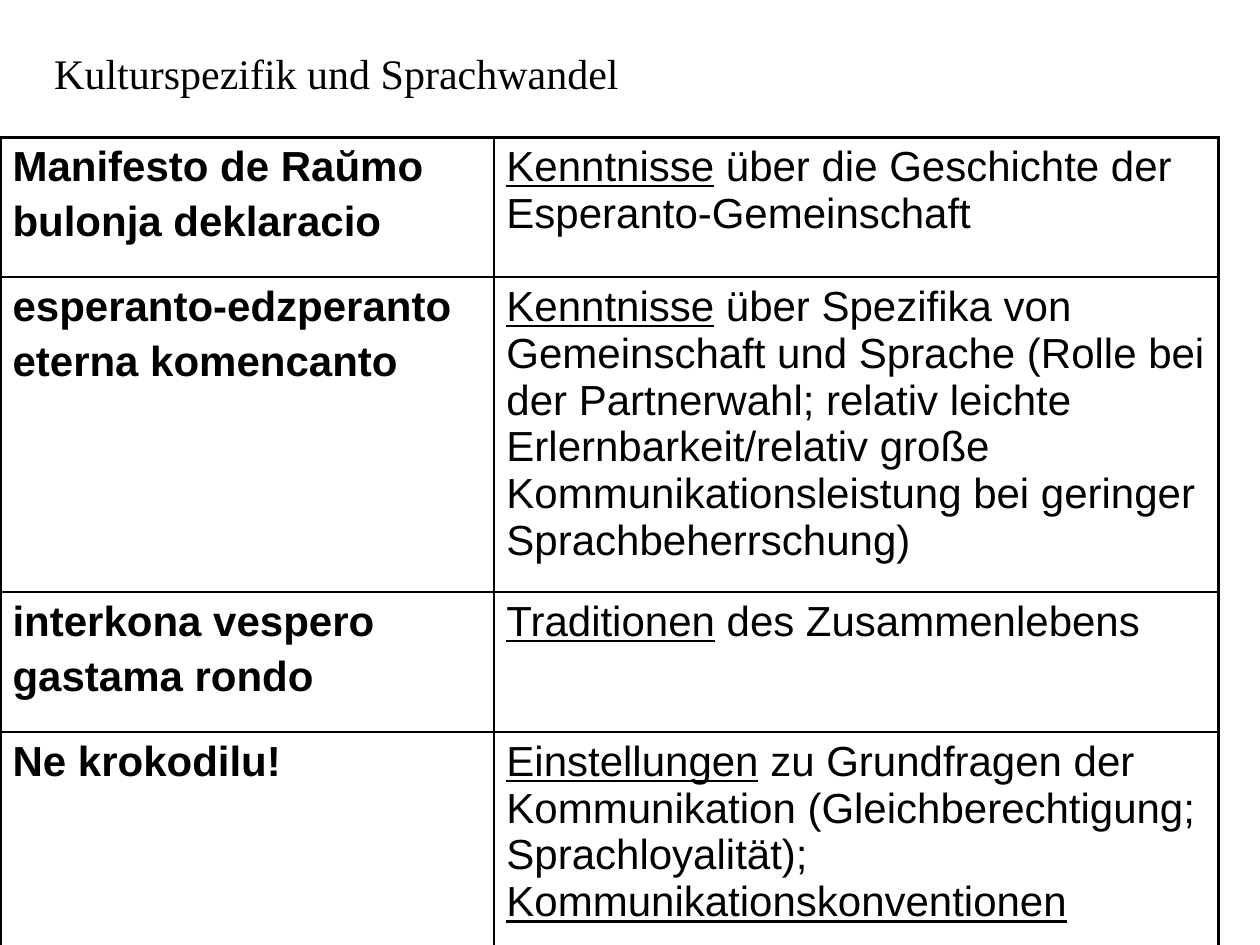
import pptx
import pptx.util
import pptx.dml.color
import pptx.enum.text
import lxml.etree

Inches = pptx.util.Inches
Pt = pptx.util.Pt


def color(code):
    return pptx.dml.color.RGBColor.from_string(code)


def write(para, text, font, bold=False, line=False):
    run = para.add_run()
    run.text = text
    run.font.name = font
    run.font.size = Pt(24)
    run.font.bold = bold
    run.font.underline = line
    run.font.color.rgb = color("000000")


rows = [
    (1.11, ["Manifesto de Raŭmo", "bulonja deklaracio"],
     [("Kenntnisse", True),
      (" über die Geschichte der Esperanto-Gemeinschaft", False)]),
    (2.5, ["esperanto-edzperanto", "eterna komencanto"],
     [("Kenntnisse", True),
      (" über Spezifika von Gemeinschaft und Sprache (Rolle bei der "
       "Partnerwahl; relativ leichte Erlernbarkeit/relativ große "
       "Kommunikationsleistung bei geringer Sprachbeherrschung)", False)]),
    (1.11, ["interkona vespero", "gastama rondo"],
     [("Traditionen", True), (" des Zusammenlebens", False)]),
    (1.7, ["Ne krokodilu!"],
     [("Einstellungen", True),
      (" zu Grundfragen der Kommunikation (Gleichberechtigung; "
       "Sprachloyalität); ", False),
      ("Kommunikationskonventionen", True)]),
]

deck = pptx.Presentation()
deck.slide_width = Inches(10)
deck.slide_height = Inches(7.5)
slide = deck.slides.add_slide(deck.slide_layouts[5])

title = slide.shapes.title
title.left, title.top = Inches(0.33), Inches(0.33)
title.width, title.height = Inches(8.25), Inches(0.5)
frame = title.text_frame
frame.word_wrap = True
frame.auto_size = pptx.enum.text.MSO_AUTO_SIZE.NONE
frame.vertical_anchor = pptx.enum.text.MSO_ANCHOR.TOP
para = frame.paragraphs[0]
para.alignment = pptx.enum.text.PP_ALIGN.LEFT
para.space_before = Pt(12)
write(para, "Kulturspezifik und Sprachwandel", "Times New Roman")

table = slide.shapes.add_table(
    len(rows), 2, Inches(0), Inches(1.09), Inches(9.67), Inches(6.42)).table
table.first_row = False
table.horz_banding = False
table.columns[0].width = Inches(3.92)
table.columns[1].width = Inches(5.75)

for r, (height, terms, notes) in enumerate(rows):
    table.rows[r].height = Inches(height)
    left, right = table.cell(r, 0), table.cell(r, 1)
    for n, term in enumerate(terms):
        frame = left.text_frame
        para = frame.add_paragraph() if n else frame.paragraphs[0]
        para.space_before = Pt(4.8)
        write(para, term, "Arial", bold=True)
    para = right.text_frame.paragraphs[0]
    para.space_before = Pt(4.8)
    for text, line in notes:
        write(para, text, "Arial", line=line)

    for c, cell in enumerate((left, right)):
        outer = {"lnL": c == 0, "lnR": c == 1,
                 "lnT": r == 0, "lnB": r == len(rows) - 1}
        props = cell._tc.get_or_add_tcPr()
        for side, thick in outer.items():
            edge = lxml.etree.SubElement(
                props, pptx.oxml.ns.qn("a:" + side),
                w=str(Pt(2.25 if thick else 1)))
            fill = lxml.etree.SubElement(edge, pptx.oxml.ns.qn("a:solidFill"))
            lxml.etree.SubElement(
                fill, pptx.oxml.ns.qn("a:srgbClr"), val="000000")
        cell.fill.background()

deck.save("out.pptx")
